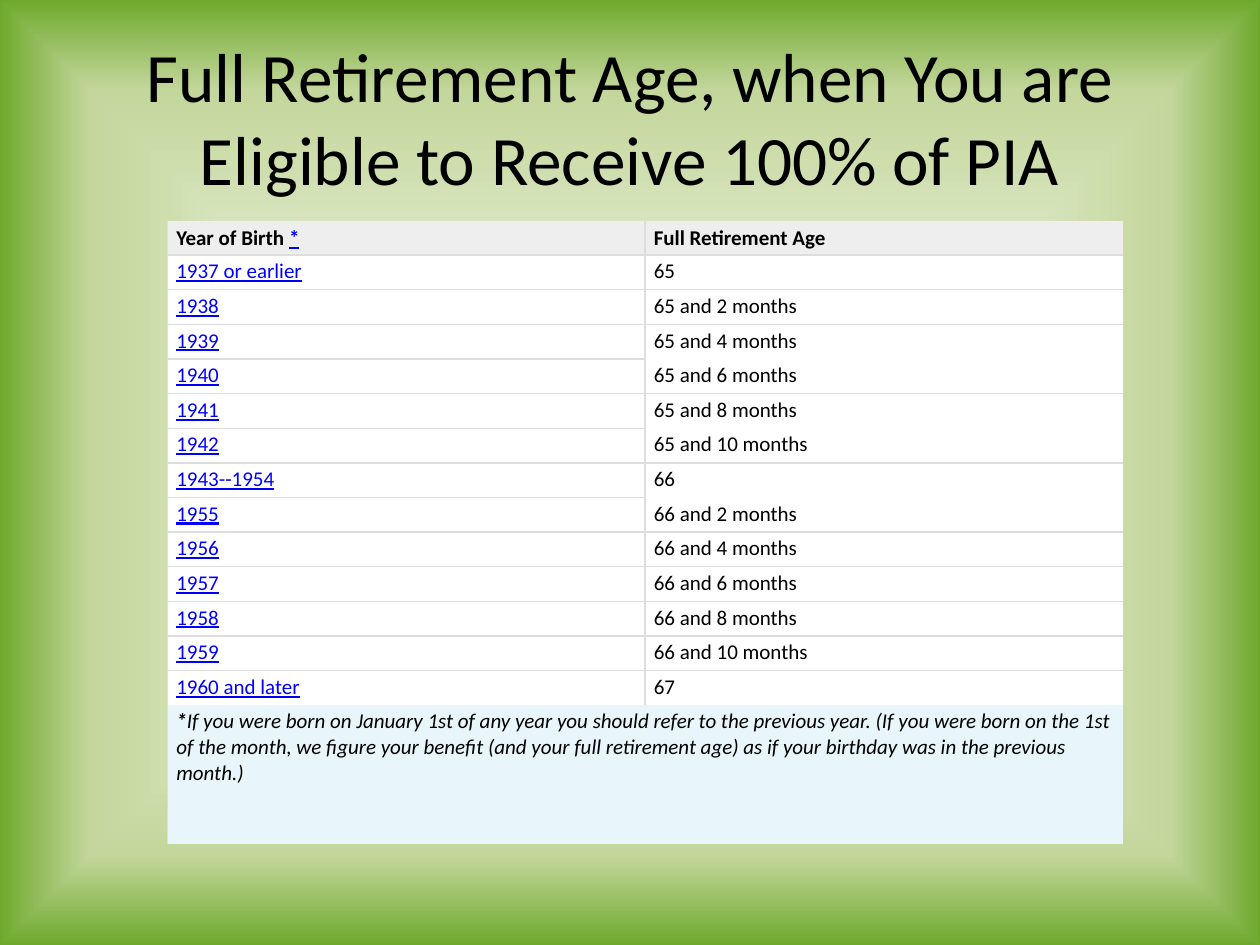
from dataclasses import dataclass

from lxml import etree
from pptx import Presentation
from pptx.dml.color import RGBColor
from pptx.enum.text import MSO_ANCHOR, PP_ALIGN
from pptx.oxml.ns import qn
from pptx.util import Inches, Pt

TOP, MIDDLE, BOTTOM = MSO_ANCHOR.TOP, MSO_ANCHOR.MIDDLE, MSO_ANCHOR.BOTTOM
CENTER = PP_ALIGN.CENTER
TITLE_ONLY = 5
FONT = "Calibri"
COLORS = {
    "text": "000000", "link": "0000FF", "rule": "DDDDDD", "header": "EEEEEE",
    "row": "FFFFFF", "note": "E8F6FC", "center": "FFFFFF", "ring": "C3D69B",
    "edge": "6EA92D",
}
SLIDE_WIDTH, SLIDE_HEIGHT = Inches(10), Inches(7.5)
ROW_HEIGHT = Inches(0.275)
NOTE_ROWS = 4  # the note is four ordinary rows high

AGES = [
    ("1937 or earlier", "65"),
    ("1938", "65 and 2 months"),
    ("1939", "65 and 4 months"),
    ("1940", "65 and 6 months"),
    ("1941", "65 and 8 months"),
    ("1942", "65 and 10 months"),
    ("1943--1954", "66"),
    ("1955", "66 and 2 months"),
    ("1956", "66 and 4 months"),
    ("1957", "66 and 6 months"),
    ("1958", "66 and 8 months"),
    ("1959", "66 and 10 months"),
    ("1960 and later", "67"),
]
OPEN_BELOW = {"1939", "1941", "1943--1954"}  # no rule under the age
NOTE = (
    "If you were born on January 1st of any year you should refer to the "
    "previous year. (If you were born on the 1st of the month, we figure your "
    "benefit (and your full retirement age) as if your birthday was in the "
    "previous month.)"
)


@dataclass
class Span:
    text: str
    color: str = "text"
    size: float = 12
    bold: bool = False
    italic: bool = False
    underline: bool = False


def add_spans(para, spans: list[Span]) -> None:
    for span in spans:
        run = para.add_run()
        run.text = span.text
        font = run.font
        font.name, font.size = FONT, Pt(span.size)
        font.bold, font.italic, font.underline = span.bold, span.italic, span.underline
        font.color.rgb = RGBColor.from_string(COLORS[span.color])


def add_color(parent, name: str, opacity: int = 100) -> None:
    color = etree.SubElement(parent, qn("a:srgbClr"), val=COLORS[name])
    if opacity < 100:
        etree.SubElement(color, qn("a:alpha"), val=str(opacity * 1000))


def set_borders(cell, sides: str) -> None:
    """Rule the sides named by L, R, T and B, and clear the others."""
    properties = cell._tc.get_or_add_tcPr()
    for position, side in enumerate("LRTB"):
        line = etree.Element(qn(f"a:ln{side}"), w=str(Pt(1)))
        if side in sides:
            add_color(etree.SubElement(line, qn("a:solidFill")), "rule")
        else:
            etree.SubElement(line, qn("a:noFill"))
        properties.insert(position, line)


def fill_cell(cell, spans: list[Span], fill: str, sides: str, anchor=TOP) -> None:
    cell.fill.solid()
    cell.fill.fore_color.rgb = RGBColor.from_string(COLORS[fill])
    cell.margin_left = cell.margin_right = Inches(0.07)
    cell.margin_top = cell.margin_bottom = Inches(0.03)
    cell.vertical_anchor = anchor
    add_spans(cell.text_frame.paragraphs[0], spans)
    set_borders(cell, sides)


def set_background(page) -> None:
    background = etree.Element(qn("p:bg"))
    properties = etree.SubElement(background, qn("p:bgPr"))
    gradient = etree.SubElement(properties, qn("a:gradFill"), rotWithShape="1")
    stops = etree.SubElement(gradient, qn("a:gsLst"))
    for place, name, opacity in ((0, "center", 61), (81, "ring", 100), (100, "edge", 100)):
        stop = etree.SubElement(stops, qn("a:gs"), pos=str(place * 1000))
        add_color(stop, name, opacity)
    shade = etree.SubElement(gradient, qn("a:path"), path="shape")
    etree.SubElement(shade, qn("a:fillToRect"), {side: "50000" for side in "ltrb"})
    etree.SubElement(properties, qn("a:effectLst"))
    page._element.cSld.insert(0, background)


def add_title(page, text: str) -> None:
    title = page.shapes.title
    title.left, title.top = int(SLIDE_WIDTH * 0.05), int(SLIDE_HEIGHT * 0.04)
    title.width, title.height = int(SLIDE_WIDTH * 0.9), Inches(1.25)
    title.text_frame.word_wrap = True
    title.text_frame.vertical_anchor = MIDDLE
    para = title.text_frame.paragraphs[0]
    para.alignment = CENTER
    add_spans(para, [Span(text, size=39.6)])


def add_age_table(page) -> None:
    note_row = len(AGES) + 1
    frame = page.shapes.add_table(
        note_row + 1, 2, Inches(1.33), Inches(1.75),
        Inches(7.58), ROW_HEIGHT * (note_row + NOTE_ROWS))
    table = frame.table
    for row in table.rows:
        row.height = ROW_HEIGHT
    table.rows[note_row].height = ROW_HEIGHT * NOTE_ROWS

    # Header
    fill_cell(table.cell(0, 0), [
        Span("Year of Birth ", bold=True),
        Span("*", "link", bold=True, underline=True),
    ], "header", "LRB", BOTTOM)
    fill_cell(table.cell(0, 1), [Span("Full Retirement Age", bold=True)],
              "header", "LB", BOTTOM)

    # Birth years and ages; the last row stays open towards the note
    open_above = False
    for number, (year, age) in enumerate(AGES, start=1):
        last = number == len(AGES)
        open_below = last or year in OPEN_BELOW
        fill_cell(table.cell(number, 0), [Span(year, "link", underline=True)],
                  "row", "LRT" if last else "LRTB")
        age_sides = "L" + ("" if open_above else "T") + ("" if open_below else "B")
        fill_cell(table.cell(number, 1), [Span(age)], "row", age_sides)
        open_above = open_below

    # Note across both columns
    note = table.cell(note_row, 0)
    note.merge(table.cell(note_row, 1))
    fill_cell(note, [Span("*", bold=True, italic=True), Span(NOTE, italic=True)],
              "note", "L")
    set_borders(table.cell(note_row, 1), "")


def main() -> None:
    deck = Presentation()
    deck.slide_width, deck.slide_height = SLIDE_WIDTH, SLIDE_HEIGHT
    page = deck.slides.add_slide(deck.slide_layouts[TITLE_ONLY])
    set_background(page)
    add_title(page, "Full Retirement Age, when You are Eligible to Receive 100% of PIA")
    add_age_table(page)
    deck.save("out.pptx")


if __name__ == "__main__":
    main()
